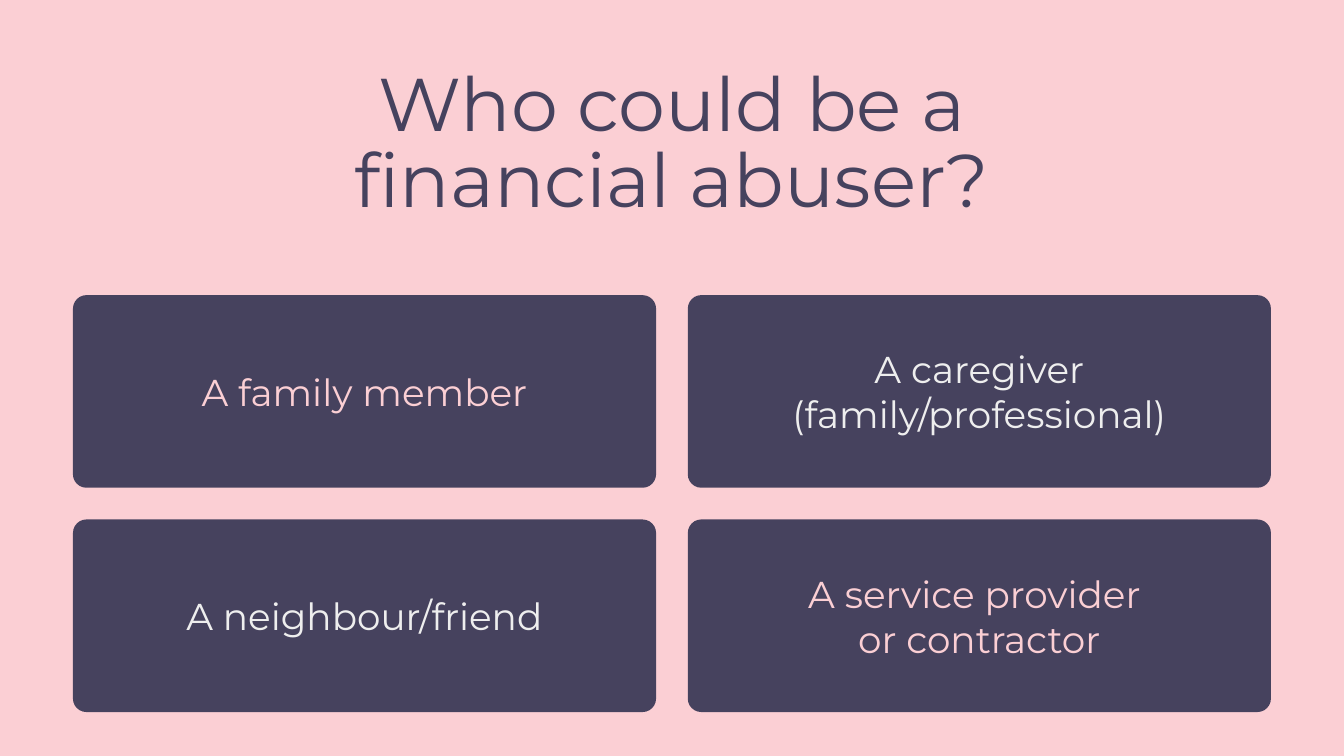
from pptx import Presentation
from pptx import util as u
from pptx.dml import color
from pptx.enum import shapes, text

PINK, NAVY, PALE = "FBCFD4", "46425E", "EEEEEE"


def rgb(value):
    return color.RGBColor.from_string(value)


class Deck:
    font = "Montserrat"
    inset = u.Cm(0.25)

    def __init__(self, width, height):
        self.prs = Presentation()
        self.prs.slide_width, self.prs.slide_height = u.Cm(width), u.Cm(height)
        self.s = self.prs.slides.add_slide(self.prs.slide_layouts[5])
        fill = self.s.background.fill
        fill.solid()
        fill.fore_color.rgb = rgb(PINK)

    def label(self, sp, words, size, ink, anchor, spacing=1.0):
        tf = sp.text_frame
        tf.text = words
        tf.word_wrap = True
        tf.auto_size = text.MSO_AUTO_SIZE.NONE
        tf.vertical_anchor = anchor
        tf.margin_left = tf.margin_right = self.inset
        tf.margin_top = tf.margin_bottom = self.inset
        for p in tf.paragraphs:
            p.alignment = text.PP_ALIGN.CENTER
            p.line_spacing = spacing
            for r in p.runs:
                r.font.name = self.font
                r.font.size = u.Pt(size)
                r.font.color.rgb = rgb(ink)

    def title(self, words, left, top, width, height):
        sp = self.s.shapes.title
        sp.left, sp.top = u.Cm(left), u.Cm(top)
        sp.width, sp.height = u.Cm(width), u.Cm(height)
        self.label(sp, words, 40, NAVY, text.MSO_ANCHOR.TOP, 0.85)

    def card(self, words, ink, left, top, width, height):
        sp = self.s.shapes.add_shape(
            shapes.MSO_SHAPE.ROUNDED_RECTANGLE,
            u.Cm(left), u.Cm(top), u.Cm(width), u.Cm(height))
        sp.adjustments[0] = 0.07
        sp.shadow.inherit = False
        sp.fill.solid()
        sp.fill.fore_color.rgb = rgb(NAVY)
        sp.line.fill.background()
        self.label(sp, words, 20, ink, text.MSO_ANCHOR.MIDDLE)


def main():
    deck = Deck(25.4, 14.29)
    deck.title("Who could be a financial abuser?", 4.62, 1.09, 16.15, 3.89)

    left, top, width, height, gap = 1.38, 5.58, 11.02, 3.64, 0.6
    abusers = [
        [("A family member", PINK), ("A caregiver (family/professional)", PALE)],
        [("A neighbour/friend", PALE), ("A service provider \vor contractor", PINK)],
    ]
    for row, cards in enumerate(abusers):
        for col, (words, ink) in enumerate(cards):
            deck.card(words, ink, left + col * (width + gap),
                      top + row * (height + gap), width, height)

    deck.prs.save("out.pptx")


if __name__ == "__main__":
    main()
